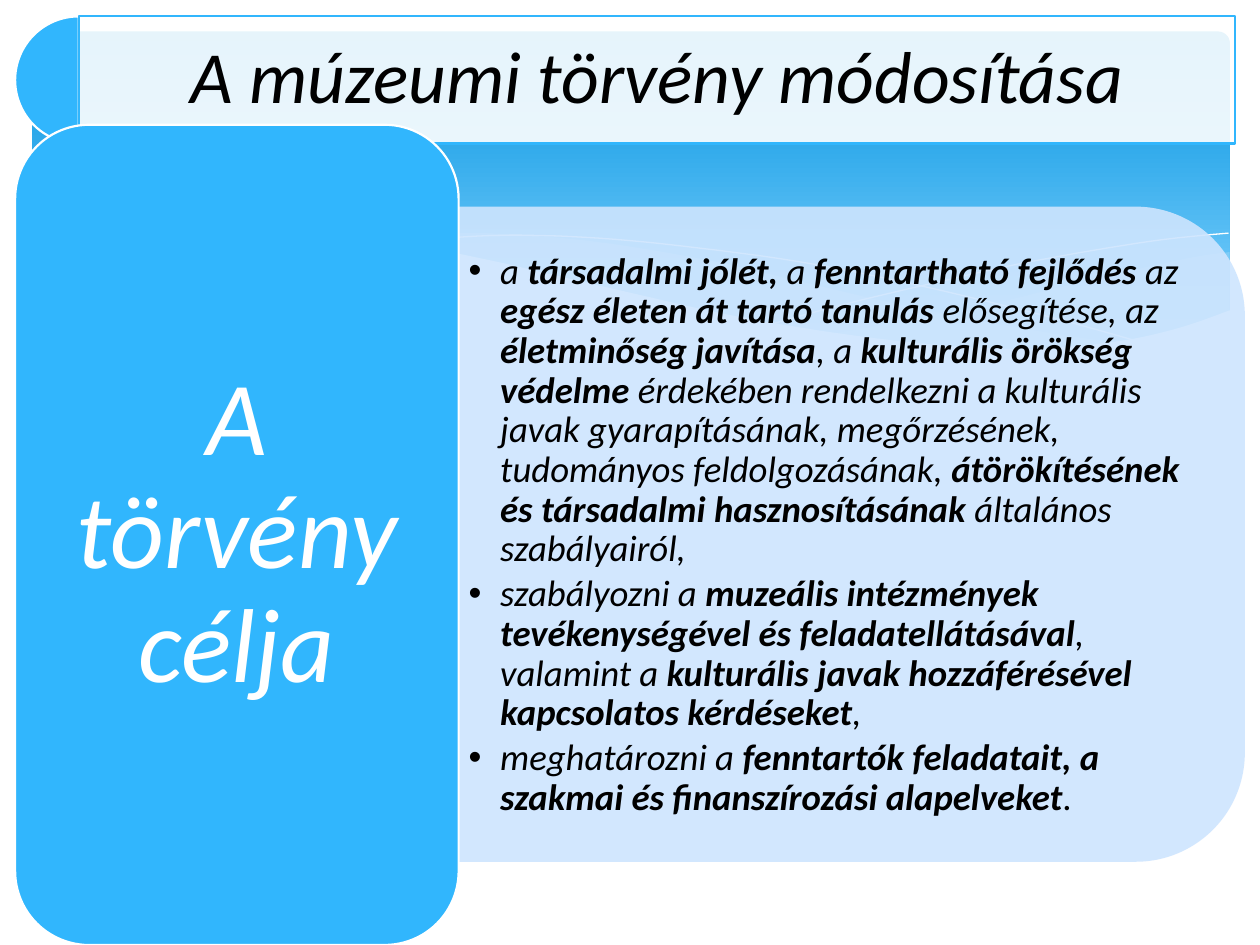
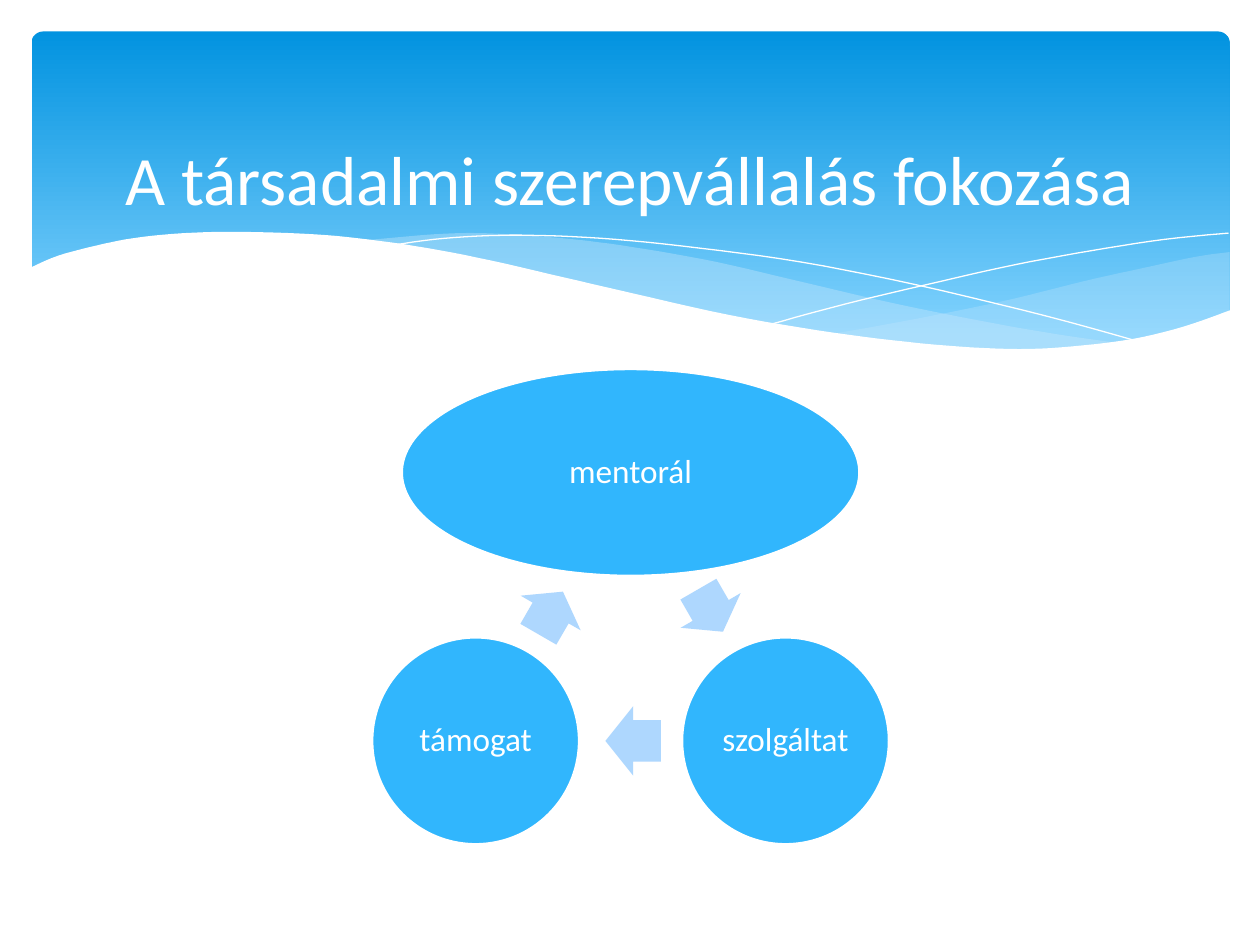
from dataclasses import dataclass
from math import cos, radians, sin

from lxml.etree import SubElement
from pptx import Presentation
from pptx.dml.color import RGBColor
from pptx.enum.shapes import MSO_SHAPE
from pptx.enum.text import MSO_ANCHOR, MSO_AUTO_SIZE, PP_ALIGN
from pptx.oxml.ns import qn
from pptx.util import Inches, Pt


@dataclass(frozen=True)
class Theme:
    font: str = "Calibri"
    white: str = "FFFFFF"
    black: str = "000000"
    accent: str = "31B6FD"
    band_top: str = "0293E0"
    band_bottom: str = "83D3FE"
    wave: str = "C6E7FC"
    panel: str = "CEE5FE"
    arrow: str = "AED7FE"
    outline: float = 1.25
    law_title: float = 42
    cycle_title: float = 39.6
    goal: float = 60
    clause: float = 21
    node: float = 19


THEME = Theme()

RIGHT_WAVE_TOP = [(9.76, 2), (9.48, 2.04), (9.06, 2.13), (8.61, 2.23),
                  (8.05, 2.37), (7.53, 2.48), (7.06, 2.57), (6.61, 2.65)]
RIGHT_WAVE_BOTTOM = [(6.61, 2.65), (7.05, 2.71), (7.57, 2.76), (8.03, 2.78),
                     (8.44, 2.77), (8.81, 2.73), (9.21, 2.65), (9.49, 2.57),
                     (9.76, 2.47)]
LONG_WAVE_TOP = [(8.93, 2.73), (8.37, 2.65), (7.75, 2.54), (7.06, 2.4),
                 (6.29, 2.22), (5.69, 2.08), (5.14, 1.98), (4.65, 1.91),
                 (4.2, 1.87), (3.8, 1.85), (3.44, 1.86), (2.86, 1.91)]
LONG_WAVE_BOTTOM = [(2.86, 1.91), (3.42, 1.99), (4.04, 2.11), (4.49, 2.22),
                    (5.3, 2.4), (6.01, 2.55), (6.65, 2.66), (7.22, 2.74),
                    (7.73, 2.77), (8.18, 2.78), (8.57, 2.77), (8.93, 2.73)]
LONG_THREAD = [(3.09, 1.95), (3.44, 1.9), (3.87, 1.87), (4.33, 1.87),
               (4.89, 1.9), (5.56, 1.97), (6.36, 2.08), (7.27, 2.26),
               (8.31, 2.51), (9.07, 2.72)]
RIGHT_THREAD = [(6.13, 2.57), (6.72, 2.41), (7.48, 2.23), (8.06, 2.1),
                (8.66, 1.99), (9.24, 1.9), (9.75, 1.85)]
PAGE_EDGE = [(9.77, 2.46), (9.4, 2.59), (8.99, 2.69), (8.5, 2.75),
             (8.09, 2.77), (7.61, 2.75), (7.08, 2.7), (6.48, 2.62),
             (5.79, 2.5), (5.03, 2.33), (4.47, 2.2), (3.91, 2.07),
             (3.4, 1.97), (2.92, 1.9), (2.5, 1.86), (1.93, 1.84),
             (1.46, 1.85), (1.06, 1.89), (0.76, 1.95), (0.46, 2.03),
             (0.23, 2.13)]

# Clauses alternate between plain and bold parts, starting plain.
CLAUSES = [
    ["a ", "társadalmi jólét,", " a ", "fenntartható fejlődés ", "az ",
     "egész életen át tartó tanulás", " elősegítése, az ",
     "életminőség javítása", ", a ", "kulturális örökség védelme ",
     "érdekében rendelkezni a kulturális javak gyarapításának, megőrzésének, "
     "tudományos feldolgozásának, ",
     "átörökítésének és társadalmi hasznosításának ",
     "általános szabályairól,"],
    ["szabályozni a ",
     "muzeális intézmények tevékenységével és feladatellátásával",
     ", valamint a ",
     "kulturális javak hozzáférésével kapcsolatos kérdéseket", ","],
    ["meghatározni a ",
     "fenntartók feladatait, a szakmai és finanszírozási alapelveket", "."],
]


def set_all(target, **values):
    for key, value in values.items():
        setattr(target, key, value)


def rgb(color):
    return RGBColor.from_string(color)


def place(shape, box):
    set_all(shape, **dict(zip(("left", "top", "width", "height"), map(Inches, box))))


def paint(shape, fill=None, line=None, width=THEME.outline, opacity=None):
    """Set fill and outline; opacity, in percent, applies to the fill."""
    shape.shadow.inherit = False
    if fill:
        shape.fill.solid()
        shape.fill.fore_color.rgb = rgb(fill)
    else:
        shape.fill.background()
    if opacity:
        color = shape.element.spPr.find(qn("a:solidFill"))[0]
        SubElement(color, qn("a:alpha"), val=str(opacity * 1000))
    if line:
        shape.line.color.rgb = rgb(line)
        shape.line.width = Pt(width)
    else:
        shape.line.fill.background()


def add_preset(slide, preset, box, rotation=0, adjustments=(), **colors):
    shape = slide.shapes.add_shape(preset, *map(Inches, box))
    shape.rotation = rotation
    for index, value in enumerate(adjustments):
        shape.adjustments[index] = value
    paint(shape, **colors)
    return shape


def format_frame(shape, insets):
    left, top, right, bottom = map(Inches, insets)
    set_all(shape.text_frame, margin_left=left, margin_top=top,
            margin_right=right, margin_bottom=bottom, word_wrap=True,
            auto_size=MSO_AUTO_SIZE.NONE, vertical_anchor=MSO_ANCHOR.MIDDLE)


def add_run(paragraph, text, size, color, bold=False, italic=False):
    run = paragraph.add_run()
    run.text = text
    set_all(run.font, name=THEME.font, size=Pt(size), bold=bold, italic=italic)
    run.font.color.rgb = rgb(color)


def write_centred(shape, text, size, color, insets, spacing=0.9, italic=False):
    format_frame(shape, insets)
    paragraph = shape.text_frame.paragraphs[0]
    set_all(paragraph, alignment=PP_ALIGN.CENTER, line_spacing=spacing)
    add_run(paragraph, text, size, color, italic=italic)


def bring_to_front(shape):
    shape.element.getparent().append(shape.element)


def smooth(points, steps=5):
    """Return a Catmull-Rom curve through the points."""
    padded = [points[0], *points, points[-1]]
    curve = [points[0]]
    for p0, p1, p2, p3 in zip(padded, padded[1:], padded[2:], padded[3:]):
        for step in range(1, steps + 1):
            t = step / steps
            curve.append(tuple(
                b + t * (c - a) / 2
                + t ** 2 * (2 * a - 5 * b + 4 * c - d) / 2
                + t ** 3 * (3 * b - a - 3 * c + d) / 2
                for a, b, c, d in zip(p0, p1, p2, p3)))
    return curve


def add_outline(slide, points, close=True, **colors):
    scaled = [(round(x * 1000), round(y * 1000)) for x, y in points]
    builder = slide.shapes.build_freeform(*scaled[0], scale=Inches(1) / 1000)
    builder.add_line_segments(scaled[1:], close=close)
    shape = builder.convert_to_shape()
    paint(shape, **colors)
    return shape


def add_wave_header(master, slide):
    """Draw the gradient band and its waves, then move them to the master."""
    band = add_preset(slide, MSO_SHAPE.ROUNDED_RECTANGLE,
                      (0.25, 0.25, 9.51, 2.7), adjustments=[0.034])
    band.fill.gradient()
    band.fill.gradient_angle = 270
    stops = zip(band.fill.gradient_stops, (0, 0.9),
                (THEME.band_top, THEME.band_bottom))
    for stop, position, color in stops:
        stop.position = position
        stop.color.rgb = rgb(color)
    parts = [band]
    for top, bottom, opacity in ((RIGHT_WAVE_TOP, RIGHT_WAVE_BOTTOM, 29),
                                 (LONG_WAVE_TOP, LONG_WAVE_BOTTOM, 40)):
        parts.append(add_outline(slide, smooth(top) + smooth(bottom),
                                 fill=THEME.wave, opacity=opacity))
    for thread in (LONG_THREAD, RIGHT_THREAD):
        parts.append(add_outline(slide, smooth(thread), close=False,
                                 line=THEME.white, width=0))
    parts.append(add_outline(slide, smooth(PAGE_EDGE) + [(0.23, 3.29), (9.77, 3.29)],
                             fill=THEME.white))
    for index, part in enumerate(parts):
        part.element.xpath(".//p:cNvPr")[0].set("id", str(100 + index))
        master.shapes.element.insert(2 + index, part.element)


def add_title_bar(slide, box, text):
    left, top, width, height = box
    add_preset(slide, MSO_SHAPE.PIE, (left, top, height, height),
               adjustments=[54, 162], fill=THEME.accent, line=THEME.white)
    title = slide.shapes.title
    place(title, (left + height / 2, top, width - height / 2, height))
    paint(title, fill=THEME.white, line=THEME.accent, opacity=90)
    write_centred(title, text, THEME.law_title, THEME.black, [0.17] * 4, italic=True)
    bring_to_front(title)


def add_clause_list(slide, box):
    left, top, width, height = box
    turned = (left + (width - height) / 2, top + (height - width) / 2, height, width)
    add_preset(slide, MSO_SHAPE.ROUND_2_SAME_RECTANGLE, turned, rotation=90,
               fill=THEME.panel, opacity=90)
    body = slide.placeholders[1]
    place(body, (left, top + 0.26, width - 0.25, height - 0.5))
    format_frame(body, (0.09, 0.04, 0.09, 0.04))
    for index, clause in enumerate(CLAUSES):
        frame = body.text_frame
        paragraph = frame.add_paragraph() if index else frame.paragraphs[0]
        properties = paragraph._p.get_or_add_pPr()
        properties.set("marL", str(Inches(0.25)))
        properties.set("indent", str(-Inches(0.25)))
        SubElement(properties, qn("a:buChar"), char="•")
        set_all(paragraph, alignment=PP_ALIGN.LEFT, line_spacing=0.9,
                space_before=Pt(0), space_after=Pt(3))
        for part, text in enumerate(clause):
            add_run(paragraph, text, THEME.clause, THEME.black,
                    bold=part % 2 == 1, italic=True)
    bring_to_front(body)


def add_goal_card(slide, box, text):
    card = add_preset(slide, MSO_SHAPE.ROUNDED_RECTANGLE, box,
                      fill=THEME.accent, line=THEME.white)
    write_centred(card, text, THEME.goal, THEME.white,
                  (0.25, 0.12, 0.25, 0.12), italic=True)


def add_cycle(slide, box):
    """Place three nodes on a circle, with arrows clockwise between them."""
    left, top, width, height = box
    node_height, arrow_height, radius = 1.64, 0.55, 1.42
    middle_x = left + width / 2
    middle_y = top + node_height / 2 + radius
    # label, node width, arrow length, arrow shift
    nodes = [("mentorál", 3.63, 0.39, (0.02, 0.03)),
             ("szolgáltat", 1.64, 0.44, (0.02, 0)),
             ("támogat", 1.64, 0.39, (-0.02, 0.05))]
    for index, (label, node_width, arrow_length, shift) in enumerate(nodes):
        angle = radians(120 * index - 90)
        x, y = middle_x + radius * cos(angle), middle_y + radius * sin(angle)
        node = add_preset(slide, MSO_SHAPE.OVAL,
                          (x - node_width / 2, y - node_height / 2,
                           node_width, node_height),
                          fill=THEME.accent, line=THEME.white)
        write_centred(node, label, THEME.node, THEME.white, [0.03] * 4)
        halfway = radians(120 * index - 30)
        x = middle_x + radius / 2 * cos(halfway) + shift[0]
        y = middle_y + radius / 2 * sin(halfway) + shift[1]
        add_preset(slide, MSO_SHAPE.RIGHT_ARROW,
                   (x - arrow_length / 2, y - arrow_height / 2,
                    arrow_length, arrow_height),
                   rotation=60 + 120 * index, adjustments=[0.6, 0.5],
                   fill=THEME.arrow)


def build_law_slide(slide):
    add_title_bar(slide, (0.12, 0.13, 9.68, 1.01), "A múzeumi törvény módosítása")
    add_clause_list(slide, (3.63, 1.64, 6.25, 5.2))
    add_goal_card(slide, (0.12, 0.99, 3.52, 6.51), "A törvény célja")


def build_cycle_slide(slide):
    title = slide.shapes.title
    place(title, (0.5, 0.77, 9, 1.88))
    write_centred(title, "A társadalmi szerepvállalás fokozása",
                  THEME.cycle_title, THEME.white, (0.1, 0.05, 0.1, 0.65), spacing=1)
    add_cycle(slide, (2.95, 2.93, 4.11, 3.77))


def main():
    deck = Presentation()
    set_all(deck, slide_width=Inches(10), slide_height=Inches(7.5))
    law_slide = deck.slides.add_slide(deck.slide_layouts[1])
    cycle_slide = deck.slides.add_slide(deck.slide_layouts[5])
    add_wave_header(deck.slide_master, law_slide)
    build_law_slide(law_slide)
    build_cycle_slide(cycle_slide)
    deck.save("out.pptx")


if __name__ == "__main__":
    main()
